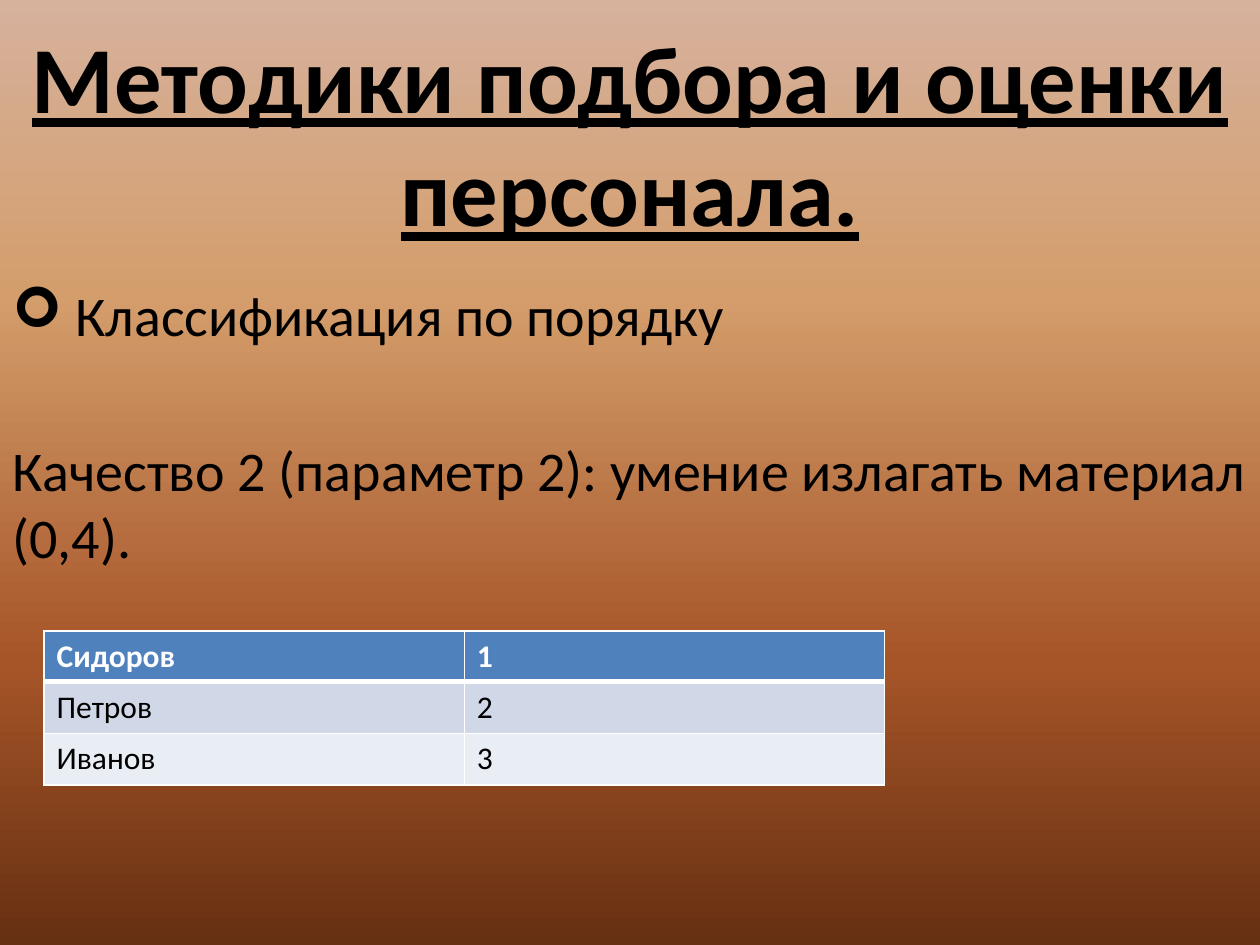
from dataclasses import dataclass

from lxml.etree import SubElement
from pptx import Presentation
from pptx.dml.color import RGBColor
from pptx.enum.text import MSO_ANCHOR, PP_ALIGN
from pptx.oxml.ns import qn
from pptx.util import Inches, Pt

FONT = "Calibri"
BLACK = RGBColor(0x00, 0x00, 0x00)
WHITE = RGBColor(0xFF, 0xFF, 0xFF)
BLUE = RGBColor(0x4F, 0x81, 0xBD)
BAND_DARK = RGBColor(0xD0, 0xD8, 0xE8)
BAND_LIGHT = RGBColor(0xE9, 0xED, 0xF4)
SAND = RGBColor(0xD6, 0xB1, 0x9C)
OCHRE = RGBColor(0xD4, 0x9E, 0x6C)
RUST = RGBColor(0xA6, 0x55, 0x28)
BROWN = RGBColor(0x66, 0x30, 0x12)
BACKGROUND = [(0, SAND), (31, OCHRE), (70, RUST), (100, BROWN)]


@dataclass
class Row:
    name: str
    rank: str
    height: float
    fill: RGBColor
    color: RGBColor = BLACK
    bold: bool = False
    bottom: float = 1


ROWS = [
    Row("Сидоров", "1", 0.39, BLUE, WHITE, True, 3),
    Row("Петров", "2", 0.41, BAND_DARK),
    Row("Иванов", "3", 0.41, BAND_LIGHT),
]


def set_background(s, stops) -> None:
    fill = s.background.fill
    fill.gradient()
    fill.gradient_angle = 270
    gs_list = next(s._element.iter(qn("a:gsLst")))
    for old in list(gs_list):
        gs_list.remove(old)
    for percent, color in stops:
        gs = SubElement(gs_list, qn("a:gs"), pos=str(percent * 1000))
        SubElement(gs, qn("a:srgbClr"), val=str(color))


def format_runs(p, size: float, color: RGBColor = BLACK,
                bold: bool = False, underline: bool = False) -> None:
    for r in p.runs:
        r.font.name = FONT
        r.font.size = Pt(size)
        r.font.color.rgb = color
        r.font.bold = bold
        r.font.underline = underline


def add_text(s, top: float, height: float, text: str, anchor):
    sp = s.shapes.add_textbox(0, Inches(top), Inches(10), Inches(height))
    tf = sp.text_frame
    tf.word_wrap = True
    tf.vertical_anchor = anchor
    tf.text = text
    return tf


def add_bullet(p, char: str, indent: float) -> None:
    pPr = p._p.get_or_add_pPr()
    pPr.set("marL", str(Inches(indent)))
    pPr.set("indent", str(-Inches(indent)))
    SubElement(pPr, qn("a:buFont"), typeface="Wingdings")
    SubElement(pPr, qn("a:buChar"), char=char)


def set_borders(cell, widths: dict[str, float]) -> None:
    tcPr = cell._tc.get_or_add_tcPr()
    for i, (side, width) in enumerate(widths.items()):
        ln = SubElement(tcPr, qn(f"a:ln{side}"), w=str(Pt(width)))
        fill = SubElement(ln, qn("a:solidFill"))
        SubElement(fill, qn("a:srgbClr"), val=str(WHITE))
        tcPr.insert(i, ln)  # borders precede the cell fill


def add_ranking(s, rows: list[Row]) -> None:
    height = sum(row.height for row in rows)
    table = s.shapes.add_table(len(rows), 2, Inches(0.35), Inches(5.01),
                               Inches(6.67), Inches(height)).table
    top = 1
    for i, row in enumerate(rows):
        table.rows[i].height = Inches(row.height)
        for cell, text in zip(table.rows[i].cells, (row.name, row.rank)):
            cell.text = text
            format_runs(cell.text_frame.paragraphs[0], 18, row.color, row.bold)
            cell.fill.solid()
            cell.fill.fore_color.rgb = row.fill
            set_borders(cell, {"L": 1, "R": 1, "T": top, "B": row.bottom})
        top = row.bottom


def main() -> None:
    prs = Presentation()
    prs.slide_width, prs.slide_height = Inches(10), Inches(7.5)
    s = prs.slides.add_slide(prs.slide_layouts[6])
    set_background(s, BACKGROUND)

    # Title
    tf = add_text(s, 0, 2.1, "Методики подбора и оценки персонала.",
                  MSO_ANCHOR.MIDDLE)
    p = tf.paragraphs[0]
    p.alignment = PP_ALIGN.CENTER
    format_runs(p, 54, bold=True, underline=True)

    # Method and the quality being rated
    tf = add_text(s, 2.18, 5.32, "Классификация по порядку", MSO_ANCHOR.TOP)
    add_bullet(tf.paragraphs[0], "➢", 0.5)
    p = tf.add_paragraph()
    p.text = "Качество 2 (параметр 2): умение излагать материал (0,4)."
    p.space_before = Pt(50)
    for p in tf.paragraphs:
        format_runs(p, 32)

    # Ranking table
    add_ranking(s, ROWS)
    prs.save("out.pptx")


if __name__ == "__main__":
    main()
